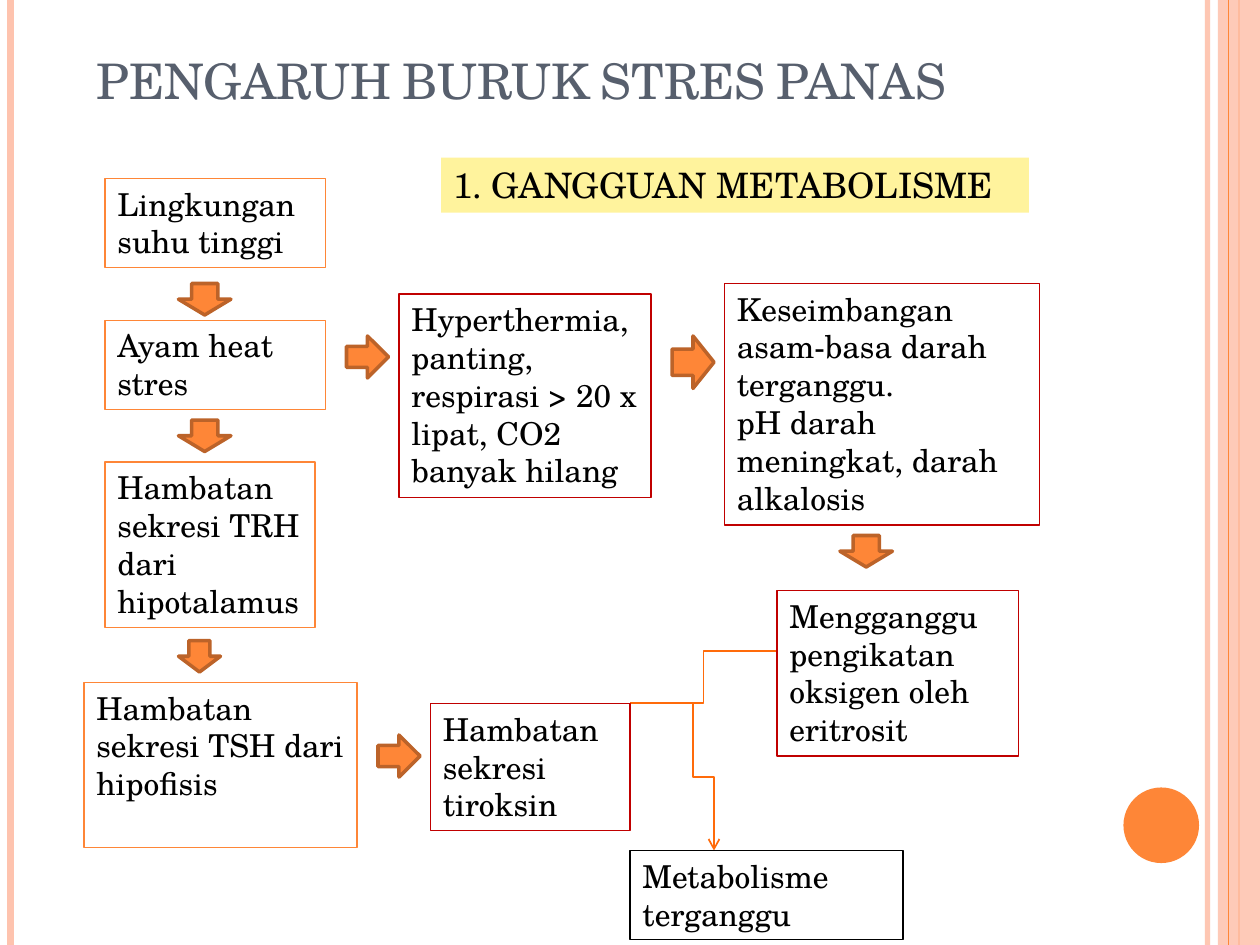
from dataclasses import dataclass
from typing import Optional

from pptx import Presentation
from pptx import util as u
from pptx.dml.color import RGBColor
from pptx.enum import shapes, text
from pptx.oxml import ns
from pptx.oxml.xmlchemy import OxmlElement

COLUMNS, ROWS = 120, 90
WIDTH, HEIGHT = u.Inches(10), u.Inches(7.5)
KIND = shapes.MSO_SHAPE


@dataclass(frozen=True)
class Theme:
    font: str = "TeX Gyre Schola"
    title: str = "575F6D"
    ink: str = "000000"
    accent: str = "FE8637"
    accent_dark: str = "BC6329"
    link: str = "FF6B0A"
    pale: str = "FEC3AE"
    effect: str = "C00000"
    banner: str = "FFF39D"
    title_size: float = 28
    banner_size: float = 20
    body_size: float = 18
    box_line: float = 0.75
    arrow_line: float = 2
    link_line: float = 1


THEME = Theme()


@dataclass(frozen=True)
class Area:
    column: float
    row: float
    columns: float
    rows: float

    def place(self) -> tuple:
        return (across(self.column), down(self.row), across(self.columns), down(self.rows))


@dataclass(frozen=True)
class Step:
    area: Area
    words: str
    line: Optional[str] = THEME.accent
    fill: Optional[str] = None
    size: float = THEME.body_size


@dataclass(frozen=True)
class Stripe:
    column: float
    color: str
    width: float
    opacity: int = 100


STRIPES = [
    Stripe(115, THEME.pale, 3, 93),
    Stripe(1, THEME.pale, 4.5),
    Stripe(118, THEME.accent, 1.5),
]
INNER_STRIPE = Stripe(117, THEME.accent, 0.75)

STEPS = [
    Step(Area(10, 17, 21, 8.5), "Lingkungan suhu tinggi"),
    Step(Area(10, 30.5, 21, 8.5), "Ayam heat stres"),
    Step(Area(10, 44, 20, 15.75), "Hambatan sekresi TRH dari hipotalamus"),
    Step(Area(8, 65, 26, 15.75), "Hambatan sekresi TSH dari hipofisis"),
    Step(Area(41, 67, 19, 12.1), "Hambatan sekresi tiroksin", THEME.effect),
    Step(Area(38, 28, 24, 19.4),
         "Hyperthermia, panting, respirasi > 20 x lipat, CO2 banyak hilang", THEME.effect),
    Step(Area(69, 27, 30, 23),
         "Keseimbangan asam-basa darah terganggu.\npH darah meningkat, darah alkalosis",
         THEME.effect),
    Step(Area(74, 56.25, 23, 15.75), "Mengganggu pengikatan oksigen oleh eritrosit", THEME.effect),
    Step(Area(60, 81, 26, 8.5), "Metabolisme terganggu", THEME.ink),
    Step(Area(42, 15, 56, 5.25), "1. GANGGUAN METABOLISME", None, THEME.banner, THEME.banner_size),
]

DOWN_ARROWS = [Area(17, 27, 5, 3), Area(17, 40, 5, 3), Area(17, 61, 4, 3), Area(80, 51, 5, 3)]
RIGHT_ARROWS = [Area(36, 70, 4, 4), Area(33, 32, 4, 4), Area(64, 32, 4, 5)]


def across(columns: float) -> int:
    return round(WIDTH * columns / COLUMNS)


def down(rows: float) -> int:
    return round(HEIGHT * rows / ROWS)


def set_opacity(fill, percent: int) -> None:
    if percent < 100:
        alpha = OxmlElement("a:alpha")
        alpha.set("val", str(percent * 1000))
        fill._xPr.find(f".//{ns.qn('a:srgbClr')}").append(alpha)


def write(frame, words: str, *, size: float, color: str, anchor=text.MSO_ANCHOR.TOP,
          small_caps: bool = False) -> None:
    frame.word_wrap = True
    frame.auto_size = text.MSO_AUTO_SIZE.NONE
    frame.vertical_anchor = anchor
    frame.text = words
    for para in frame.paragraphs:
        para.alignment = text.PP_ALIGN.LEFT
        for span in para.runs:
            span.font.name = THEME.font
            span.font.size = u.Pt(size)
            span.font.color.rgb = RGBColor.from_string(color)
            if small_caps:
                span.font._element.set("cap", "small")


def add_figure(page, kind, area: Area, *, fill: Optional[str] = None, line: Optional[str] = None,
               width: float = THEME.box_line, opacity: int = 100):
    figure = page.shapes.add_shape(kind, *area.place())
    figure.shadow.inherit = False
    if fill:
        figure.fill.solid()
        figure.fill.fore_color.rgb = RGBColor.from_string(fill)
        set_opacity(figure.fill, opacity)
    else:
        figure.fill.background()
    if line:
        figure.line.color.rgb = RGBColor.from_string(line)
        figure.line.width = u.Pt(width)
    else:
        figure.line.fill.background()
    return figure


def add_step(page, step: Step) -> None:
    box = add_figure(page, KIND.RECTANGLE, step.area, fill=step.fill, line=step.line)
    write(box.text_frame, step.words, size=step.size, color=THEME.ink)


def add_line(page, kind, start: tuple, end: tuple, color: str, width: float):
    line = page.shapes.add_connector(kind, across(start[0]), down(start[1]),
                                     across(end[0]), down(end[1]))
    line.line.color.rgb = RGBColor.from_string(color)
    line.line.width = u.Pt(width)
    line._element.spPr.append(OxmlElement("a:effectLst"))
    return line


def add_stripe(page, stripe: Stripe) -> None:
    line = add_line(page, shapes.MSO_CONNECTOR.STRAIGHT, (stripe.column, 0),
                    (stripe.column, ROWS), stripe.color, stripe.width)
    set_opacity(line.line.fill, stripe.opacity)


def add_links(page) -> None:
    elbow = shapes.MSO_CONNECTOR.ELBOW
    add_line(page, elbow, (60, 67), (74, 62), THEME.link, THEME.link_line)
    descent = add_line(page, elbow, (74, 73), (60, 75), THEME.link, THEME.link_line)
    descent._element.spPr.find(ns.qn("a:xfrm")).set("rot", str(270 * 60000))
    head = OxmlElement("a:tailEnd")
    head.set("type", "arrow")
    descent.line._get_or_add_ln().append(head)


def main() -> None:
    deck = Presentation()
    deck.slide_width, deck.slide_height = WIDTH, HEIGHT
    page = deck.slides.add_slide(deck.slide_layouts[5])

    for stripe in STRIPES:
        add_stripe(page, stripe)
    add_figure(page, KIND.RECTANGLE, Area(116, 0, 4, ROWS), fill=THEME.pale, opacity=87)
    add_stripe(page, INNER_STRIPE)
    add_figure(page, KIND.OVAL, Area(107, 75, 7.2, 7.2), fill=THEME.accent)

    title = page.shapes.title
    title.left, title.top, title.width, title.height = Area(8, -2, 96, 13).place()
    write(title.text_frame, "PENGARUH BURUK STRES PANAS", size=THEME.title_size,
          color=THEME.title, anchor=text.MSO_ANCHOR.BOTTOM, small_caps=True)

    for kind, areas in ((KIND.DOWN_ARROW, DOWN_ARROWS), (KIND.RIGHT_ARROW, RIGHT_ARROWS)):
        for area in areas:
            add_figure(page, kind, area, fill=THEME.accent, line=THEME.accent_dark,
                       width=THEME.arrow_line)
    add_links(page)
    for step in STEPS:
        add_step(page, step)

    deck.save("out.pptx")


if __name__ == "__main__":
    main()
